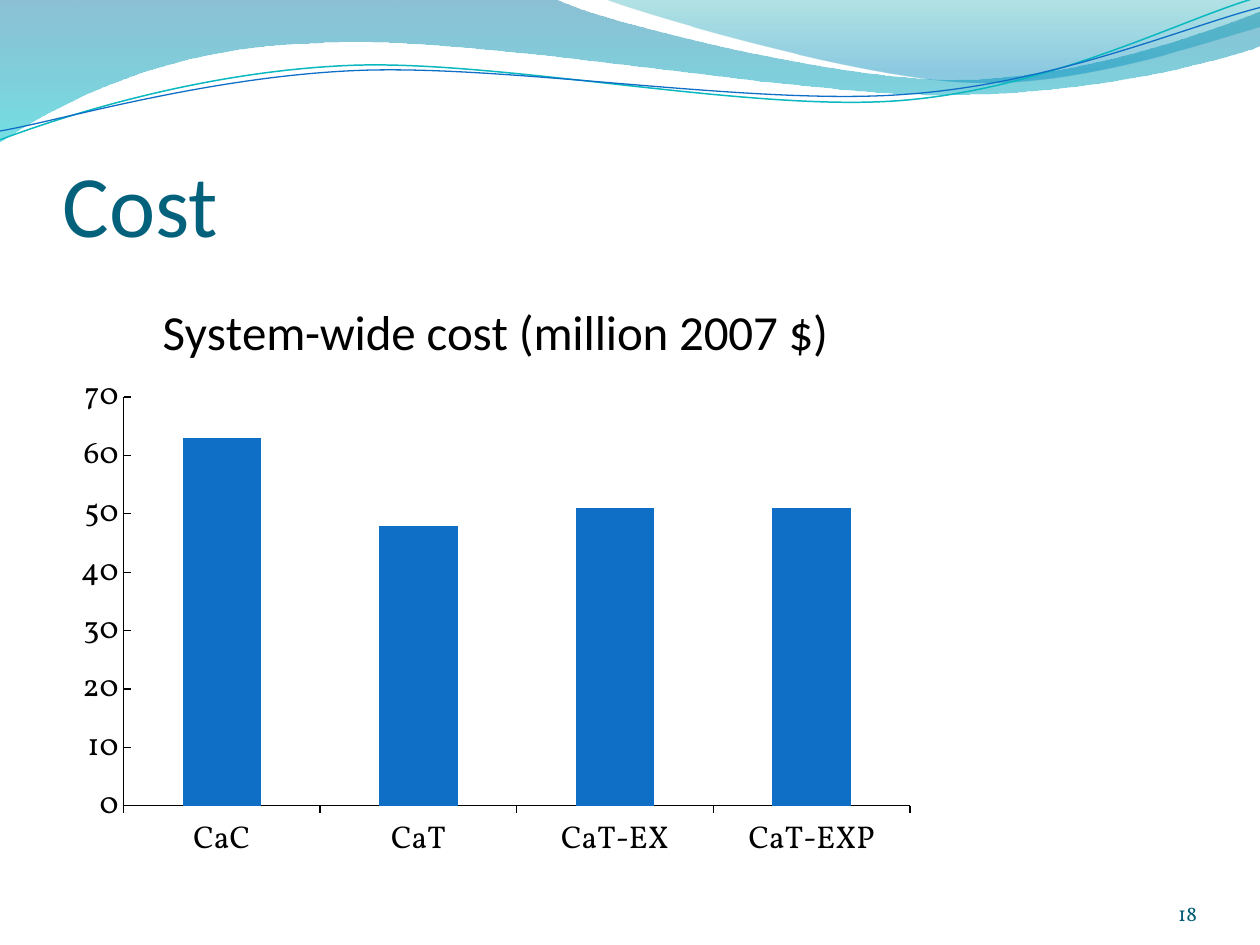
from lxml.etree import SubElement
from pptx import Presentation
from pptx.chart.data import CategoryChartData
from pptx.dml.color import RGBColor
from pptx.enum.chart import XL_CHART_TYPE, XL_TICK_MARK
from pptx.enum.text import MSO_ANCHOR, PP_ALIGN
from pptx.oxml import parse_xml
from pptx.oxml.ns import nsdecls, qn
from pptx.util import Inches, Pt

BLACK = RGBColor(0, 0, 0)
BLUE = RGBColor(0x0F, 0x6F, 0xC6)
CYAN = RGBColor(0x0A, 0xB8, 0xBF)
TITLE_TEAL = RGBColor(0x04, 0x61, 0x7B)
NUMBER_TEAL = RGBColor(0x04, 0x5D, 0x75)
WAVE_TOP = RGBColor(0x00, 0x74, 0xA1)
WAVE_BOTTOM = RGBColor(0x00, 0xC6, 0xCF)
CREST_TOP = RGBColor(0x00, 0xA1, 0xA9)
CREST_BOTTOM = RGBColor(0x00, 0x8B, 0xBF)

HEADING_FONT, BODY_FONT = "Calibri", "Vollkorn"

# Outlines in hundredths of the band's width: a 2-tuple is a corner,
# a 6-tuple is a cubic curve (two controls, then the end point).
WAVE = [(0, 0), (44, -0.1), (47.6, 1.7, 66.4, 6.3, 75.8, 6.3),
        (85.3, 6.3, 95.8, 2.6, 100, 0.9), (100.1, 3.6),
        (98.3, 4.4, 87, 7.6, 74.6, 7.5), (62.2, 7.5, 38.2, 2.8, 25.7, 3.4),
        (12.9, 3.6, 4.6, 8.3, -0.1, 11.3)]
CREST = [(47.9, -0.1), (50.9, 1.1, 68.2, 6.2, 76.9, 6.5),
         (85.6, 6.9, 96.1, 3.2, 100, 2.1), (100, 0)]
CYAN_LINE = [(0, 11.1), (4.8, 9.3, 15.8, 5.7, 27.7, 5.2),
             (39.5, 4.7, 59.3, 8.9, 71.3, 8), (83.3, 7.1, 93.8, 1.5, 99.8, -0.2)]
BLUE_LINE = [(0, 10.4), (4.7, 9.6, 16.4, 6.1, 28.3, 5.6),
             (40.3, 5.1, 59.7, 8.4, 71.7, 7.5), (83.6, 6.7, 94.1, 2.1, 100, 0.6)]


def add_outline(slide, box, outline, close):
    """Draw straight segments, then merge each curve's three into one cubic."""
    left, top, width, _ = box
    points = [(left + step[i] * width / 100, top + step[i + 1] * width / 100)
              for step in outline for i in range(0, len(step), 2)]
    builder = slide.shapes.build_freeform(*points[0], scale=1.0)
    builder.add_line_segments(points[1:], close=close)
    s = builder.convert_to_shape()
    s.shadow.inherit = False

    segments = iter(list(s._element.spPr.iter(qn("a:lnTo"))))
    for step in outline[1:]:
        first = next(segments)
        if len(step) == 6:
            first.tag = qn("a:cubicBezTo")
            for _ in range(2):
                segment = next(segments)
                first.append(segment[0])
                segment.getparent().remove(segment)
    return s


def add_gradient_area(slide, box, outline, stops):
    """Fill an outline from top to bottom; a stop is (position, colour, opacity %)."""
    s = add_outline(slide, box, outline, True)
    s.line.fill.background()
    s.fill.gradient()
    s.fill.gradient_angle = 270
    for stop, (position, color, _) in zip(s.fill.gradient_stops, stops):
        stop.position = position
        stop.color.rgb = color
    for clr, (_, _, opacity) in zip(s._element.spPr.iter(qn("a:srgbClr")), stops):
        SubElement(clr, qn("a:alpha")).set("val", str(opacity * 1000))


def add_wave_band(slide, box):
    add_gradient_area(slide, box, WAVE, [(0, WAVE_TOP, 45), (1, WAVE_BOTTOM, 55)])
    add_gradient_area(slide, box, CREST, [(0, CREST_TOP, 30), (0.8, CREST_BOTTOM, 45)])
    for outline, color, weight in ((CYAN_LINE, CYAN, 0.85), (BLUE_LINE, BLUE, 0.75)):
        s = add_outline(slide, box, outline, False)
        s.fill.background()
        s.line.color.rgb = color
        s.line.width = Pt(weight)


def style_font(font, name, size, color):
    font.name, font.size, font.bold = name, Pt(size), False
    font.color.rgb = color


def add_text(slide, box, text, font, size, color, align=PP_ALIGN.LEFT, inset_top=0):
    tf = slide.shapes.add_textbox(*box).text_frame
    tf.word_wrap = True
    tf.vertical_anchor = MSO_ANCHOR.BOTTOM
    tf.margin_left = tf.margin_right = tf.margin_bottom = 0
    tf.margin_top = Inches(inset_top)
    p = tf.paragraphs[0]
    p.alignment = align
    r = p.add_run()
    r.text = text
    style_font(r.font, font, size, color)


def set_plot_layout(chart, x, y, w, h):
    """Place the inner plot area by shares of the chart's box."""
    area = chart._chartSpace.chart.plotArea
    for old in area.findall(qn("c:layout")):
        area.remove(old)
    places = "".join(f'<c:{tag} val="{share}"/>'
                     for tag, share in zip("xywh", (x, y, w, h)))
    area.insert(0, parse_xml(
        f'<c:layout {nsdecls("c")}><c:manualLayout><c:layoutTarget val="inner"/>'
        f'<c:xMode val="edge"/><c:yMode val="edge"/>{places}'
        '</c:manualLayout></c:layout>'))


def add_cost_chart(slide, box):
    data = CategoryChartData()
    data.categories = ["CaC", "CaT", "CaT-EX", "CaT-EXP"]
    data.add_series("Series 1", [63, 48, 51, 51])
    chart = slide.shapes.add_chart(XL_CHART_TYPE.COLUMN_STACKED, *box, data).chart
    chart.has_legend = False
    style_font(chart.font, BODY_FONT, 18, BLACK)
    set_plot_layout(chart, 0.07, 0.21, 0.91, 0.68)

    chart.has_title = True
    chart.chart_title.include_in_layout = False
    p = chart.chart_title.text_frame.paragraphs[0]
    r = p.add_run()
    r.text = "System-wide cost (million 2007 $)"
    for font in (p.font, r.font):
        style_font(font, HEADING_FONT, 28, BLACK)

    plot = chart.plots[0]
    plot.vary_by_categories = False
    plot.gap_width, plot.overlap = 150, 100
    fill = plot.series[0].format.fill
    fill.solid()
    fill.fore_color.rgb = BLUE

    for axis, tick in ((chart.category_axis, XL_TICK_MARK.OUTSIDE),
                       (chart.value_axis, XL_TICK_MARK.INSIDE)):
        axis.has_major_gridlines = False
        axis.major_tick_mark = tick
        axis.minor_tick_mark = XL_TICK_MARK.NONE
        axis.format.line.color.rgb = BLACK
        axis.format.line.width = Pt(0.75)
    axis = chart.value_axis
    axis.minimum_scale, axis.maximum_scale, axis.major_unit = 0, 70, 10
    axis.tick_labels.number_format = "General"
    axis.tick_labels.number_format_is_linked = False


def main():
    prs = Presentation()
    prs.slide_width, prs.slide_height = Inches(10), Inches(7.5)
    slide = prs.slides.add_slide(prs.slide_layouts[6])

    def box(x, y, w, h):
        """Box from percentages of the slide's width and height."""
        return [int(share * side / 100) for share, side in
                zip((x, y, w, h), (prs.slide_width, prs.slide_height) * 2)]

    add_wave_band(slide, box(0, 0, 100, 15))
    add_text(slide, box(5, 10.27, 90, 16.67), "Cost", HEADING_FONT, 50, TITLE_TEAL,
             inset_top=0.05)
    add_cost_chart(slide, box(5, 28.67, 68.6, 63.6))
    add_text(slide, box(86.7, 92.67, 8.3, 5.33), "18", BODY_FONT, 12, NUMBER_TEAL,
             PP_ALIGN.RIGHT)
    prs.save("out.pptx")


if __name__ == "__main__":
    main()
